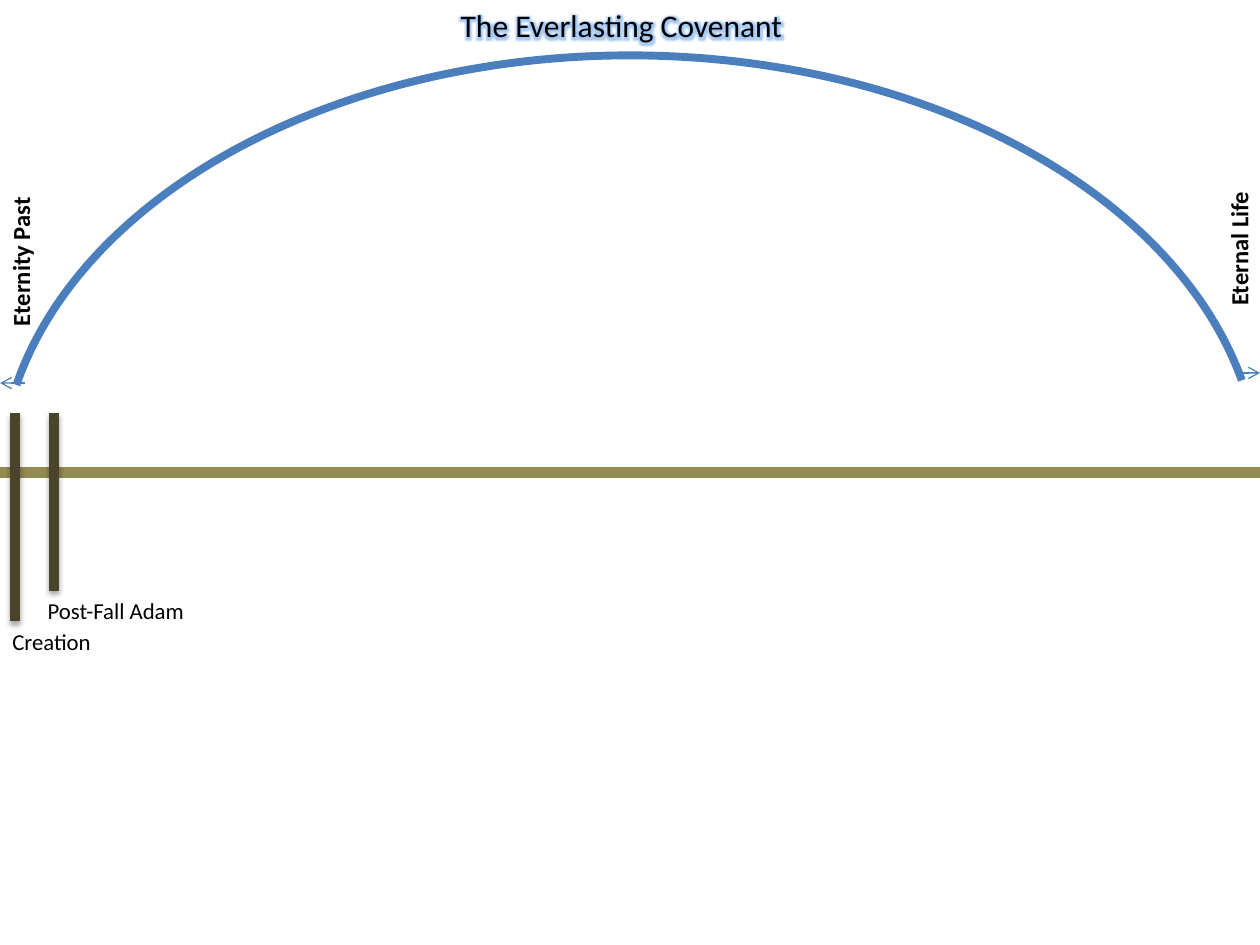
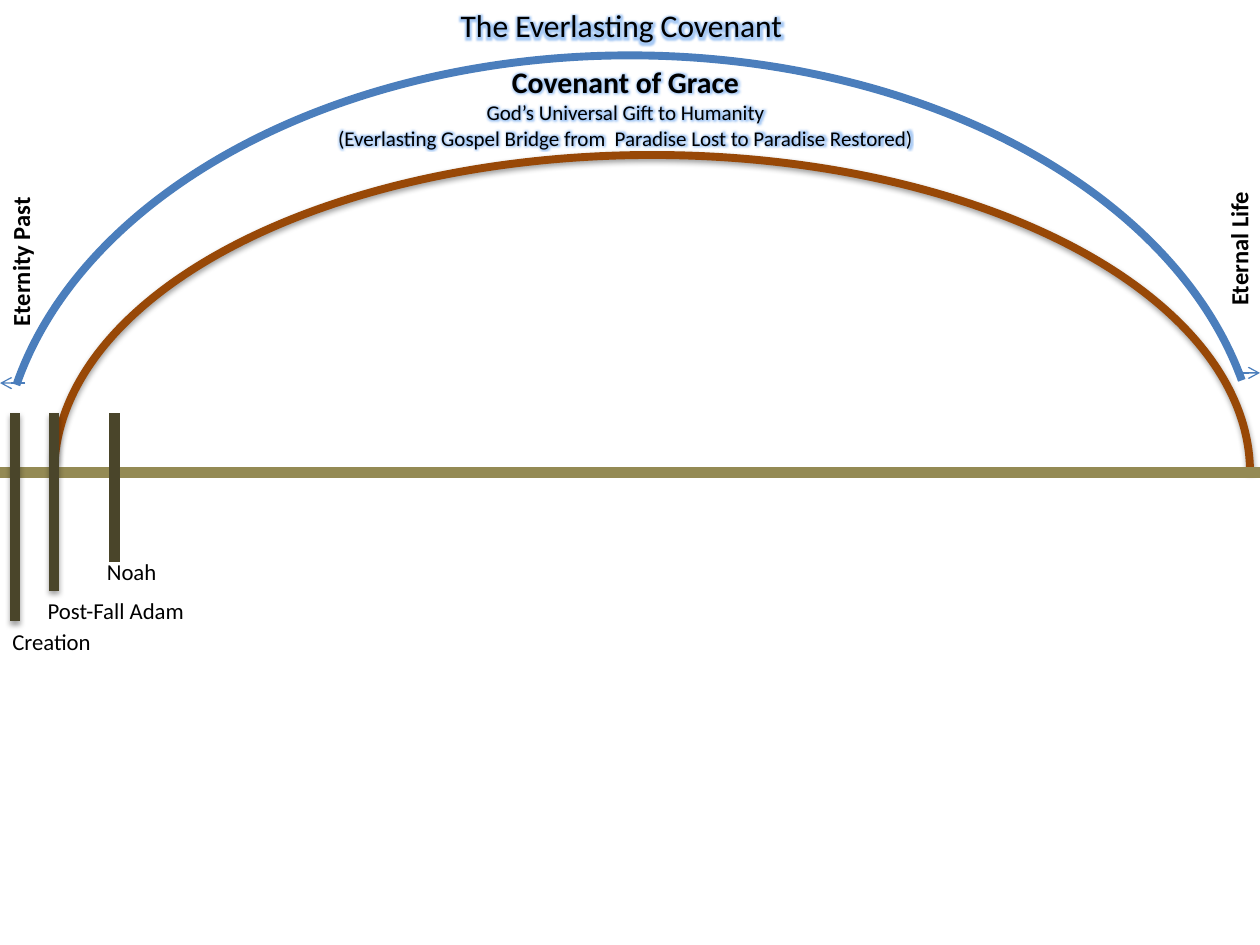
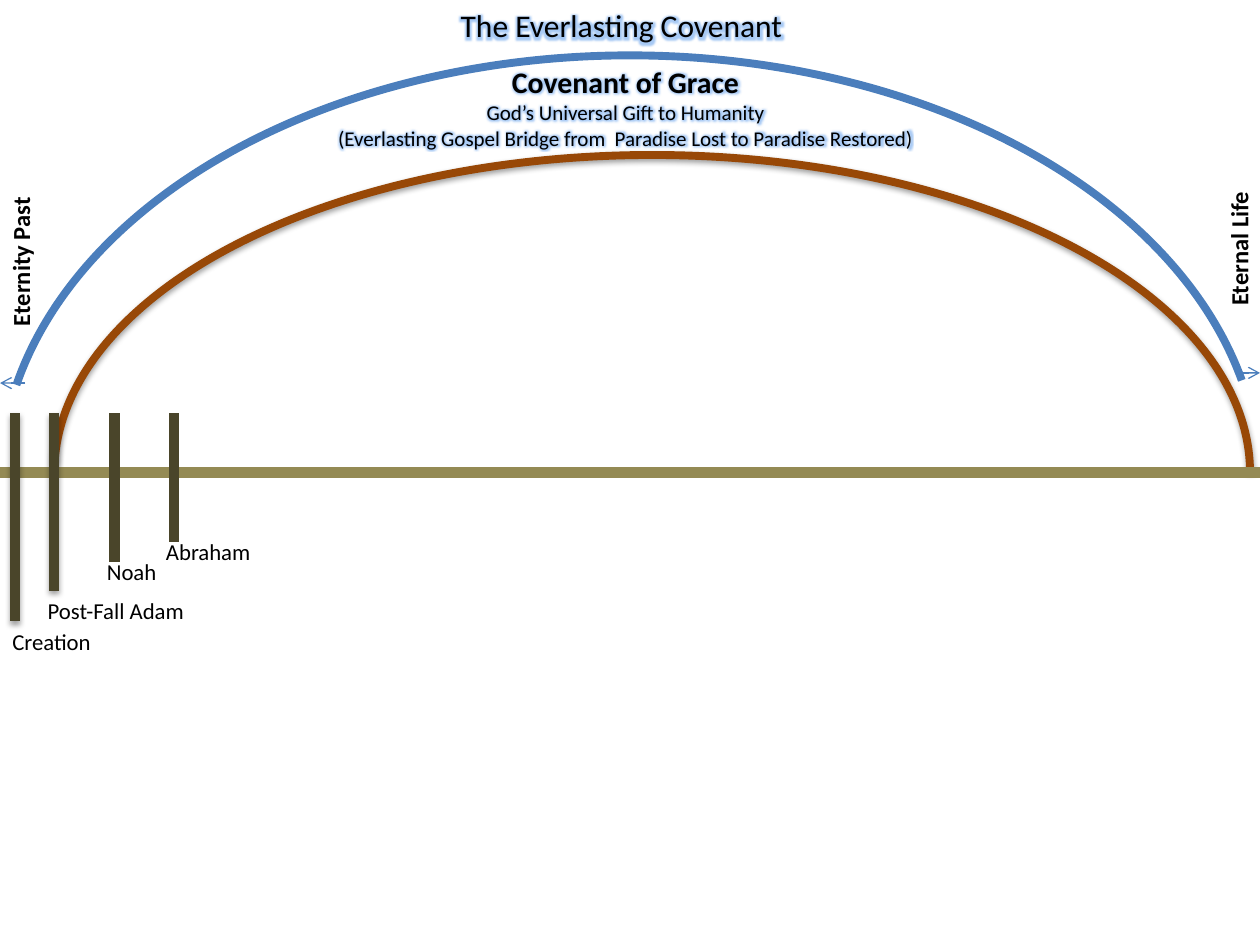
from lxml import etree
from pptx import Presentation
from pptx import util as u
from pptx.dml.color import RGBColor
from pptx.enum import shapes, text
from pptx.oxml import ns

Pt = u.Pt
COLORS = {
    "sky": "4B7EBC",
    "ground": "948A54",
    "post": "4A452A",
    "grace": "984807",
    "ink": "000000",
    "glow": "4F94EB",
}
FONT = "Calibri"
WIDTH, HEIGHT = 720, 540
POST_TOP = 236.2
GROUND_Y = 270

# name, post x, post bottom, label (left, top, width), shadow opacity
MILESTONES = [
    ("Creation", 8.64, 355, (0, 355, 93.6), 35),
    ("Post-Fall Adam", 31, 337.7, (20.2, 337.7, 141.8), 35),
    ("Noah", 65.4, 321, (54, 315.4, 73.4), None),
    ("Abraham", 99.4, 309.6, (87.8, 303.8, 113), None),
]
# name, left, top of the upright box
ETERNITIES = [("Eternity Past", -51.8, 117.4), ("Eternal Life", 644.4, 105.8)]
# start x, end x, y
HORIZON_ARROWS = [(14.4, 0, 218.9), (705.6, WIDTH, 213.1)]
GRACE_LINES = [
    ("Covenant of Grace", 17, True),
    ("God’s Universal Gift to Humanity", 12, False),
    ("(Everlasting Gospel Bridge from  Paradise Lost to Paradise Restored)", 12, False),
]


class Timeline:
    """Holds the style and the current slide."""

    def __init__(self):
        self.prs = Presentation()
        self.prs.slide_width, self.prs.slide_height = Pt(WIDTH), Pt(HEIGHT)
        self.slide = None

    def new_slide(self):
        self.slide = self.prs.slides.add_slide(self.prs.slide_layouts[5])

    def effect(self, parent, kind=None, color="ink", alpha=100, **lengths):
        """Add an effect list, empty unless a kind is given."""
        effects = etree.SubElement(parent, ns.qn("a:effectLst"))
        if kind:
            attrs = {name: str(value) for name, value in lengths.items()}
            item = etree.SubElement(effects, ns.qn("a:" + kind), attrs)
            tint = etree.SubElement(item, ns.qn("a:srgbClr"), val=COLORS[color])
            etree.SubElement(tint, ns.qn("a:alpha"), val=str(alpha * 1000))

    def stroke(self, shape, color, width, shadow=None):
        shape.line.color.rgb = RGBColor.from_string(COLORS[color])
        shape.line.width = Pt(width)
        if shadow:
            self.effect(shape._element.spPr, "outerShdw", alpha=shadow,
                        blurRad=Pt(3.1), dist=Pt(1.8), dir=90 * 60000, rotWithShape=0)
        else:
            self.effect(shape._element.spPr)

    def line(self, x1, y1, x2, y2, color, width, shadow=None, arrow=False):
        line = self.slide.shapes.add_connector(
            shapes.MSO_CONNECTOR.STRAIGHT, Pt(x1), Pt(y1), Pt(x2), Pt(y2))
        self.stroke(line, color, width, shadow)
        if arrow:
            outline = line._element.spPr.find(ns.qn("a:ln"))
            etree.SubElement(outline, ns.qn("a:tailEnd"), type="arrow")

    def arc(self, left, top, width, height, start, end, color, shadow=None):
        """Draw an arc between two angles in degrees."""
        arc = self.slide.shapes.add_shape(
            shapes.MSO_SHAPE.ARC, Pt(left), Pt(top), Pt(width), Pt(height))
        # Adjustments count 60000ths of a degree, scaled by 100000
        arc.adjustments[0], arc.adjustments[1] = start * 0.6, end * 0.6
        arc.fill.background()
        self.stroke(arc, color, 4.5, shadow)

    def fill_text(self, frame, lines, align, glow):
        frame.text = "\n".join(line[0] for line in lines)
        frame.word_wrap = True
        frame.vertical_anchor = text.MSO_ANCHOR.TOP
        for paragraph, (_, size, bold) in zip(frame.paragraphs, lines):
            paragraph.alignment = align
            for run in paragraph.runs:
                font = run.font
                font.size, font.bold = Pt(size), bold
                font.color.rgb = RGBColor.from_string(COLORS["ink"])
                if glow:
                    self.effect(run._r.get_or_add_rPr(), "glow", "glow", 50, rad=Pt(5))
                font.name = FONT

    def title(self, words, left, top, width, height):
        title = self.slide.shapes.title
        title.left, title.top = Pt(left), Pt(top)
        title.width, title.height = Pt(width), Pt(height)
        self.fill_text(title.text_frame, [(words, 18, False)], text.PP_ALIGN.CENTER, True)
        title.text_frame.auto_size = text.MSO_AUTO_SIZE.NONE

    def label(self, lines, left, top, width, height, align=text.PP_ALIGN.LEFT,
              rotation=0, glow=False):
        box = self.slide.shapes.add_textbox(Pt(left), Pt(top), Pt(width), Pt(height))
        box.rotation = rotation
        self.fill_text(box.text_frame, lines, align, glow)
        box.text_frame.auto_size = text.MSO_AUTO_SIZE.SHAPE_TO_FIT_TEXT


def draw_stage(timeline, milestones, with_grace):
    timeline.new_slide()
    timeline.title("The Everlasting Covenant ", 229.7, 0, 254.9, 49)

    # Inner arc stands behind the ground line
    if with_grace:
        timeline.arc(31, 88.6, 683.3, 362.9, 180.88, 359.88, "grace", shadow=38)
    timeline.line(0, GROUND_Y, WIDTH, GROUND_Y, "ground", 6)
    for start, end, y in HORIZON_ARROWS:
        timeline.line(start, y, end, y, "sky", 0.75, arrow=True)

    # Milestone posts and their names
    for name, x, bottom, (left, top, width), shadow in milestones:
        timeline.line(x, POST_TOP, x, bottom, "post", 6, shadow)
        timeline.label([(name, 13, False)], left, top, width, 23)

    # Both ends of time and the outer arc
    for name, left, top in ETERNITIES:
        timeline.label([(name, 14, True)], left, top, 127.4, 24.5, rotation=270)
    timeline.arc(0, 31.7, WIDTH, 487.4, 188.98, 350.58, "sky")

    if with_grace:
        timeline.label(GRACE_LINES, 144.7, 33.1, 425.5, 56.9,
                       text.PP_ALIGN.CENTER, glow=True)


def main():
    timeline = Timeline()
    # Each slide adds one more milestone
    for count in (2, 3, 4):
        draw_stage(timeline, MILESTONES[:count], with_grace=count > 2)
    timeline.prs.save("out.pptx")


if __name__ == "__main__":
    main()
